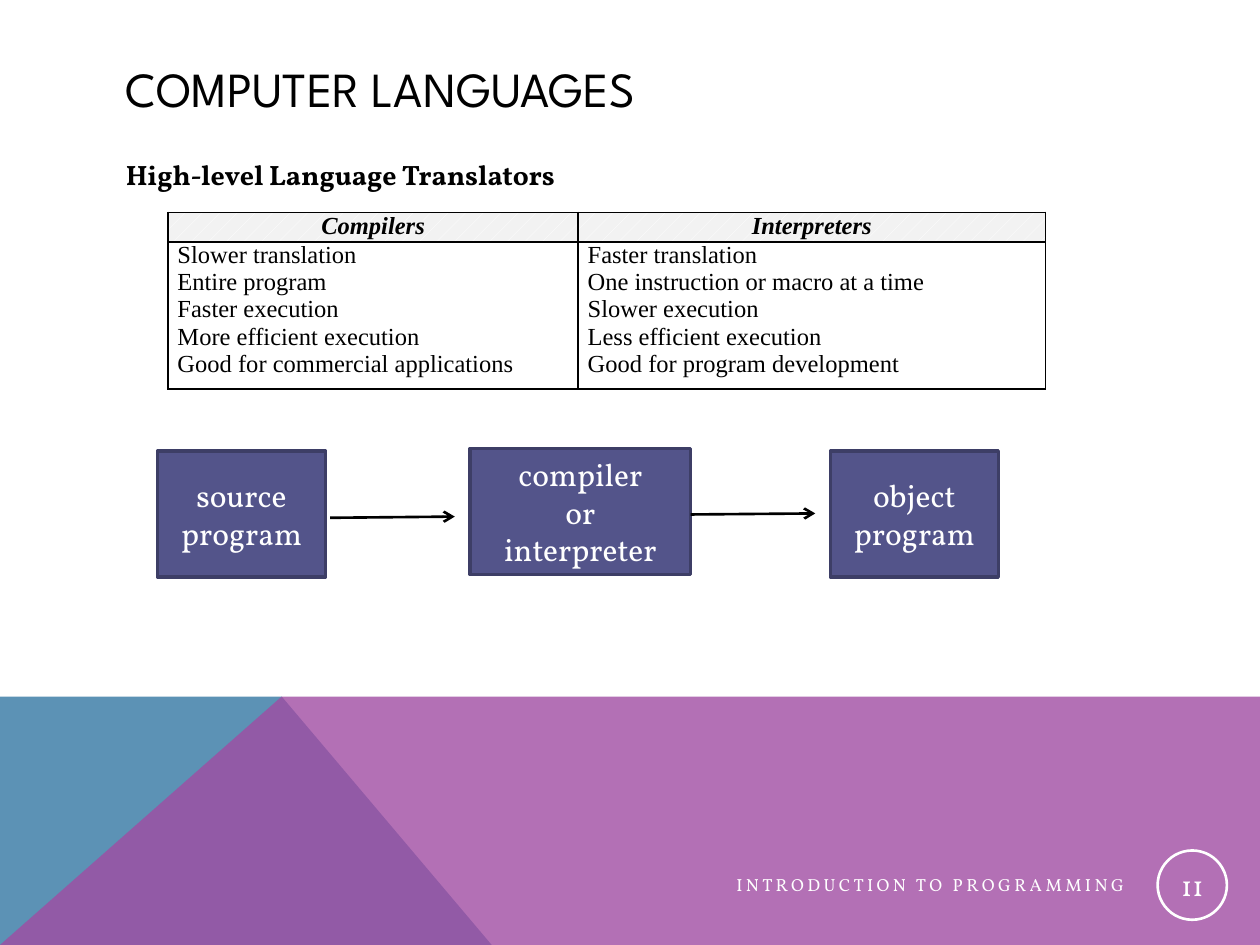
from lxml.etree import SubElement
from pptx import Presentation
from pptx.dml.color import RGBColor
from pptx.enum.dml import MSO_PATTERN
from pptx.enum.shapes import MSO_CONNECTOR, MSO_SHAPE
from pptx.enum.text import MSO_ANCHOR, PP_ALIGN
from pptx.oxml import parse_xml
from pptx.oxml.ns import nsdecls, qn
from pptx.util import Pt

BLACK = RGBColor(0, 0, 0)
WHITE = RGBColor(0xFF, 0xFF, 0xFF)
TEAL = RGBColor(0x5C, 0x92, 0xB5)
PURPLE = RGBColor(0xA0, 0x4D, 0xA3)
INDIGO = RGBColor(0x53, 0x54, 0x8A)
INDIGO_DARK = RGBColor(0x3D, 0x3E, 0x66)
HEADER_GRAY = RGBColor(0xF2, 0xF2, 0xF2)
HEADING_FONT, BODY_FONT, TABLE_FONT = "League Spartan", "Vollkorn", "Times New Roman"

# Content
TITLE = "COMPUTER LANGUAGES"
SUBTITLE = "High‑level Language Translators"
FOOTER = "INTRODUCTION TO PROGRAMMING"
PAGE_NUMBER = "11"
COMPARISON = {
    "Compilers": ["Slower translation", "Entire program", "Faster execution",
                  "More efficient execution", "Good for commercial applications"],
    "Interpreters": ["Faster translation", "One instruction or macro at a time",
                     "Slower execution", "Less efficient execution",
                     "Good for program development"],
}
# Lines of text, then left, top, width, height
STEPS = [
    (["source program"], (90, 257.8, 96, 72)),
    (["compiler", "or", "interpreter"], (268.6, 256.3, 126, 72)),
    (["object program"], (474.5, 257.8, 96, 72)),
]
# Start and end points
ARROWS = [((188.6, 295.9), (259.9, 295.2)), ((394.6, 294), (465.9, 293.4))]
# Corner points, fill, opacity in percent
BANDS = [
    ([(0, 540), (0, 397.7), (160.6, 397.7), (281.2, 540)], TEAL, 100),
    ([(0, 540), (160.6, 397.7), (720, 397.9), (720, 540)], PURPLE, 80),
]
COLUMN_WIDTHS, ROW_HEIGHTS = (234.4, 267), (15.4, 77.6)


def write(frame, lines, font, size, color, align=PP_ALIGN.LEFT,
          anchor=MSO_ANCHOR.MIDDLE, line_spacing=None):
    frame.word_wrap = True
    frame.vertical_anchor = anchor
    for index, line in enumerate(lines):
        paragraph = frame.paragraphs[0] if index == 0 else frame.add_paragraph()
        paragraph.text = line
        paragraph.alignment = align
        paragraph.line_spacing = line_spacing
        paragraph.font.name, paragraph.font.size = font, Pt(size)
        paragraph.font.color.rgb = color
    return frame.paragraphs[0]


def add_text(slide, box, *args, **options):
    frame = slide.shapes.add_textbox(*map(Pt, box)).text_frame
    return write(frame, *args, **options)


def add_box(slide, kind, box, line_color, line_width):
    shape = slide.shapes.add_shape(kind, *map(Pt, box))
    shape.shadow.inherit = False
    shape.line.color.rgb, shape.line.width = line_color, Pt(line_width)
    return shape


def add_band(slide, points, color, opacity):
    builder = slide.shapes.build_freeform(*points[0], scale=Pt(1))
    builder.add_line_segments(points[1:], close=True)
    band = builder.convert_to_shape()
    band.shadow.inherit = False
    band.line.fill.background()
    band.fill.solid()
    band.fill.fore_color.rgb = color
    if opacity < 100:
        color_node = band.fill._xPr.find(qn("a:solidFill"))[0]
        SubElement(color_node, qn("a:alpha"), val=str(opacity * 1000))


def add_arrow(slide, start, end):
    arrow = slide.shapes.add_connector(MSO_CONNECTOR.STRAIGHT, *map(Pt, start + end))
    arrow.line.color.rgb, arrow.line.width = BLACK, Pt(1.5)
    SubElement(arrow.line._get_or_add_ln(), qn("a:tailEnd"), type="arrow")
    SubElement(arrow._element.spPr, qn("a:effectLst"))


def add_borders(cell):
    properties = cell._tc.get_or_add_tcPr()
    for index, side in enumerate("LRTB"):
        properties.insert(index, parse_xml(
            f'<a:ln{side} {nsdecls("a")} w="{Pt(1)}"><a:solidFill>'
            f'<a:srgbClr val="{BLACK}"/></a:solidFill></a:ln{side}>'))


def add_comparison(slide):
    table = slide.shapes.add_table(2, 2, Pt(96), Pt(121.4), Pt(sum(COLUMN_WIDTHS)),
                                   Pt(sum(ROW_HEIGHTS))).table
    for row, height in zip(table.rows, ROW_HEIGHTS):
        row.height = Pt(height)
    for index, (heading, points) in enumerate(COMPARISON.items()):
        table.columns[index].width = Pt(COLUMN_WIDTHS[index])
        header, body = table.cell(0, index), table.cell(1, index)
        for cell, lines, align in ((header, [heading], PP_ALIGN.CENTER),
                                   (body, points, PP_ALIGN.LEFT)):
            cell.margin_left = cell.margin_right = Pt(5.4)
            cell.margin_top = cell.margin_bottom = 0
            write(cell.text_frame, lines, TABLE_FONT, 14, BLACK, align, MSO_ANCHOR.TOP)
            cell.fill.background()
            add_borders(cell)
        header.fill.patterned()
        header.fill.pattern = MSO_PATTERN.PERCENT_5
        header.fill.fore_color.rgb, header.fill.back_color.rgb = WHITE, HEADER_GRAY
        font = header.text_frame.paragraphs[0].font
        font.bold = font.italic = True


def main():
    presentation = Presentation()
    presentation.slide_width, presentation.slide_height = Pt(720), Pt(540)
    slide = presentation.slides.add_slide(presentation.slide_layouts[6])

    # Bottom bands
    for band in BANDS:
        add_band(slide, *band)

    # Headings
    add_text(slide, (64.8, 28.8, 592, 43.2), [TITLE], HEADING_FONT, 28, BLACK)
    subtitle = add_text(slide, (64.8, 86.4, 592, 32), [SUBTITLE], BODY_FONT, 16, BLACK,
                        anchor=MSO_ANCHOR.TOP)
    subtitle.font.bold = True

    # Footer and page number
    footer = add_text(slide, (277.2, 494.6, 372.2, 21.6), [FOOTER], BODY_FONT, 10, WHITE,
                      PP_ALIGN.RIGHT)
    footer.runs[0].font._element.set("spc", "200")
    badge = add_box(slide, MSO_SHAPE.OVAL, (661.5, 486, 39.6, 39.6), WHITE, 1.5)
    badge.fill.background()
    frame = badge.text_frame
    frame.margin_left = frame.margin_right = frame.margin_top = frame.margin_bottom = Pt(0.7)
    write(frame, [PAGE_NUMBER], BODY_FONT, 16.5, WHITE, PP_ALIGN.CENTER)

    # Translation steps
    for lines, box in STEPS:
        step = add_box(slide, MSO_SHAPE.RECTANGLE, box, INDIGO_DARK, 2)
        step.fill.solid()
        step.fill.fore_color.rgb = INDIGO
        write(step.text_frame, lines, BODY_FONT, 18, WHITE, PP_ALIGN.CENTER)
    for arrow in ARROWS:
        add_arrow(slide, *arrow)

    add_comparison(slide)
    presentation.save("out.pptx")


if __name__ == "__main__":
    main()
